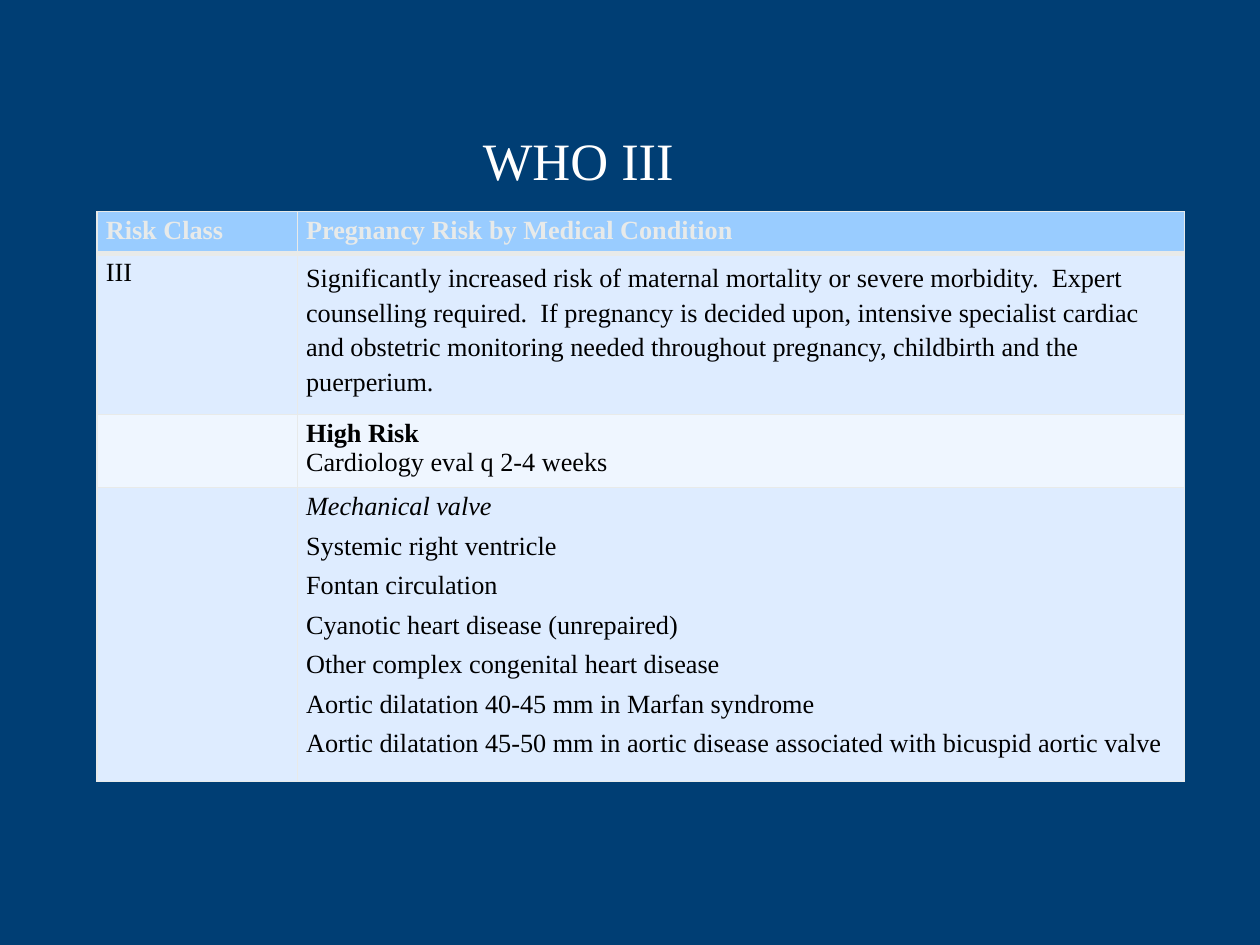
from lxml import etree
from pptx import Presentation
from pptx import util as u
from pptx.dml import color
from pptx.enum import text
from pptx.oxml import ns

WIDTH, HEIGHT = 10, 7.5
COLUMNS = [1.59, 7.04]
BORDER = "E8EAE9"
CONDITIONS = [
    "Systemic right ventricle",
    "Fontan circulation",
    "Cyanotic heart disease (unrepaired)",
    "Other complex congenital heart disease",
    "Aortic dilatation 40-45 mm in Marfan syndrome",
    "Aortic dilatation 45-50 mm in aortic disease associated with bicuspid aortic valve",
]
COUNSEL = (
    "Significantly increased risk of maternal mortality or severe morbidity.  "
    "Expert counselling required.  If pregnancy is decided upon, intensive "
    "specialist cardiac and obstetric monitoring needed throughout pregnancy, "
    "childbirth and the puerperium."
)
HEAD = dict(bold=True, hex_color=BORDER)
ROWS = [
    (0.33, "99CCFF", [("Risk Class", HEAD)],
     [("Pregnancy Risk by Medical Condition", HEAD)]),
    (1.25, "DEECFF", [("III", {})],
     [(COUNSEL, dict(line=1.2, after=3))]),
    (0.57, "EFF6FF", [],
     [("High Risk", dict(bold=True)), ("Cardiology eval q 2-4 weeks", {})]),
    (2.2, "DEECFF", [],
     [("Mechanical valve", dict(italic=True, after=3))]
     + [(name, dict(before=3, after=3)) for name in CONDITIONS]),
]


def rgb(hex_color):
    """Turn a hex string into a colour."""
    return color.RGBColor.from_string(hex_color)


def write(p, words, size=15, hex_color="000000", bold=False, italic=False,
          align=None, line=None, before=0, after=0):
    """Add formatted words to a paragraph."""
    p.alignment, p.line_spacing = align, line
    p.space_before, p.space_after = u.Pt(before), u.Pt(after)
    r = p.add_run()
    r.text = words
    r.font.name, r.font.size = "Times New Roman", u.Pt(size)
    r.font.bold, r.font.italic = bold, italic
    r.font.color.rgb = rgb(hex_color)


def add_title(s, words):
    """Add the centred slide title."""
    sp = s.shapes.add_textbox(u.Inches(0.028 * WIDTH), u.Inches(0.135 * HEIGHT),
                              u.Inches(0.862 * WIDTH), u.Inches(HEIGHT / 15))
    tf = sp.text_frame
    tf.word_wrap = True
    tf.vertical_anchor = text.MSO_ANCHOR.MIDDLE
    write(tf.paragraphs[0], words, size=30, hex_color="FFFFFF",
          align=text.PP_ALIGN.CENTER)


def add_borders(cell, widths):
    """Draw the cell edges in the order left, right, top, bottom."""
    tc_pr = cell._tc.get_or_add_tcPr()
    for side, width in zip("LRTB", widths):
        ln = etree.SubElement(tc_pr, ns.qn(f"a:ln{side}"), w=str(u.Pt(width)))
        fill = etree.SubElement(ln, ns.qn("a:solidFill"))
        etree.SubElement(fill, ns.qn("a:srgbClr"), val=BORDER)


def fill_cell(cell, paragraphs, fill, widths):
    """Set the borders, fill, margins and paragraphs of a cell."""
    add_borders(cell, widths)
    cell.fill.solid()
    cell.fill.fore_color.rgb = rgb(fill)
    cell.margin_left = cell.margin_right = u.Inches(0.07)
    cell.margin_top = cell.margin_bottom = u.Inches(0.04)
    tf = cell.text_frame
    for i, (words, style) in enumerate(paragraphs):
        write(tf.add_paragraph() if i else tf.paragraphs[0], words, **style)


def add_risk_table(s):
    """Add the table of pregnancy risks."""
    height = sum(row[0] for row in ROWS)
    table = s.shapes.add_table(
        len(ROWS), len(COLUMNS), u.Inches(0.077 * WIDTH),
        u.Inches(0.224 * HEIGHT), u.Inches(sum(COLUMNS)), u.Inches(height)).table
    for column, width in zip(table.columns, COLUMNS):
        column.width = u.Inches(width)
    for i, (row_height, fill, *cells) in enumerate(ROWS):
        table.rows[i].height = u.Inches(row_height)
        widths = (1, 1, 3 if i == 1 else 1, 3 if i == 0 else 1)
        for j, paragraphs in enumerate(cells):
            fill_cell(table.cell(i, j), paragraphs, fill, widths)


def main():
    """Build and save the slide."""
    prs = Presentation()
    prs.slide_width, prs.slide_height = u.Inches(WIDTH), u.Inches(HEIGHT)
    s = prs.slides.add_slide(prs.slide_layouts[6])
    s.background.fill.solid()
    s.background.fill.fore_color.rgb = rgb("003E74")
    add_title(s, "WHO III")
    add_risk_table(s)
    prs.save("out.pptx")


if __name__ == "__main__":
    main()
